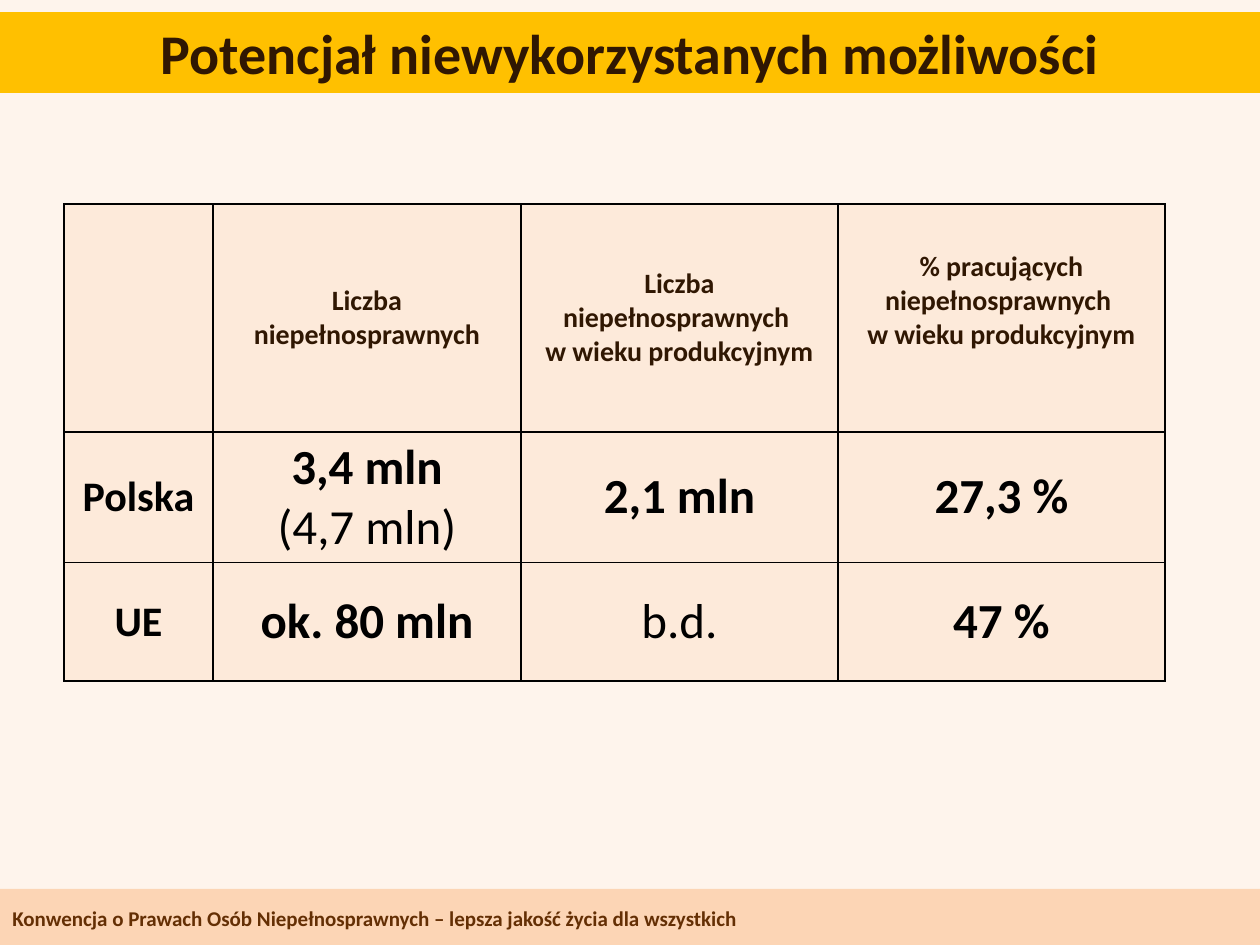
"""Build the slide comparing disability employment in Poland and the EU."""
from lxml.etree import SubElement
from pptx import Presentation
from pptx.dml.color import RGBColor
from pptx.enum.shapes import MSO_SHAPE as Shape
from pptx.enum.text import MSO_ANCHOR as Anchor, PP_ALIGN as Align
from pptx.oxml.ns import qn
from pptx.util import Emu, Pt

SCALE = 914400 / 126
BROWN, BLACK, PEACH = "301702", "000000", "FDEADA"
COLUMNS = [149, 308, 317, 327]
ROWS = [228, 130, 119]
LABEL = {"size": 24, "color": BLACK}
VALUE = {"size": 28, "color": BLACK}
PLAIN = {**VALUE, "bold": False}
CELLS = [
    [
        [],
        [("Liczba niepełnosprawnych", {})],
        [("Liczba niepełnosprawnych \nw wieku produkcyjnym", {})],
        [("% pracujących niepełnosprawnych \nw wieku produkcyjnym", {})],
    ],
    [
        [("Polska", LABEL)],
        [("3,4 mln", VALUE), ("\n(4,7 mln)", PLAIN)],
        [("2,1 mln", VALUE)],
        [("27,3 %", VALUE)],
    ],
    [
        [("UE", LABEL)],
        [("ok. 80 mln", VALUE)],
        [("b.d.", PLAIN)],
        [("47 %", VALUE)],
    ],
]


def px(length):
    return Emu(round(length * SCALE))


def rgb(value):
    return RGBColor.from_string(value)


def write(frame, text, size=16, color=BROWN, bold=True, align=Align.CENTER):
    para = frame.paragraphs[0]
    para.alignment = align
    for index, line in enumerate(text.split("\n")):
        if index:
            para.add_line_break()
        if line:
            span = para.add_run()
            span.text = line
            font = span.font
            font.name, font.size, font.bold = "Calibri", Pt(size), bold
            font.color.rgb = rgb(color)


class SlideBuilder:
    def __init__(self, deck, background):
        self.slide = deck.slides.add_slide(deck.slide_layouts[6])
        fill = self.slide.background.fill
        fill.solid()
        fill.fore_color.rgb = rgb(background)

    def band(self, top, height, color):
        band = self.slide.shapes.add_shape(
            Shape.RECTANGLE, 0, px(top), px(1260), px(height))
        band.shadow.inherit = False
        band.fill.solid()
        band.fill.fore_color.rgb = rgb(color)
        band.line.fill.background()
        band.text_frame.vertical_anchor = Anchor.TOP
        return band

    def text(self, top, height, text, **style):
        box = self.slide.shapes.add_textbox(0, px(top), px(1260), px(height))
        box.text_frame.word_wrap = True
        box.text_frame.vertical_anchor = Anchor.MIDDLE
        write(box.text_frame, text, **style)

    def border(self, cell):
        properties = cell._tc.get_or_add_tcPr()
        for side in ("lnL", "lnR", "lnT", "lnB"):
            line = SubElement(properties, qn(f"a:{side}"), w=str(Pt(1)))
            fill = SubElement(line, qn("a:solidFill"))
            SubElement(fill, qn("a:srgbClr"), val=BLACK)

    def table(self, left, top, columns, rows, cells):
        table = self.slide.shapes.add_table(
            len(rows), len(columns), px(left), px(top),
            px(sum(columns)), px(sum(rows))).table
        table.first_row = table.horz_banding = False
        for column, width in zip(table.columns, columns):
            column.width = px(width)
        for row, height, contents in zip(table.rows, rows, cells):
            row.height = px(height)
            for cell, spans in zip(row.cells, contents):
                self.border(cell)
                cell.fill.solid()
                cell.fill.fore_color.rgb = rgb(PEACH)
                cell.vertical_anchor = Anchor.MIDDLE
                for text, style in spans:
                    write(cell.text_frame, text, **style)
        return table


def main():
    deck = Presentation()
    deck.slide_width, deck.slide_height = px(1260), px(945)
    builder = SlideBuilder(deck, "FEF4EC")
    builder.band(889, 56, "FCD5B5")
    builder.text(899, 39, "Konwencja o Prawach Osób Niepełnosprawnych – "
                 "lepsza jakość życia dla wszystkich",
                 size=12, color="642F04", align=Align.LEFT)
    title = builder.band(12, 81, "FFC000")
    write(title.text_frame, "Potencjał niewykorzystanych możliwości", size=32)
    table = builder.table(64, 204, COLUMNS, ROWS, CELLS)
    table.cell(0, 3).margin_bottom = px(40)
    deck.save("out.pptx")


if __name__ == "__main__":
    main()
